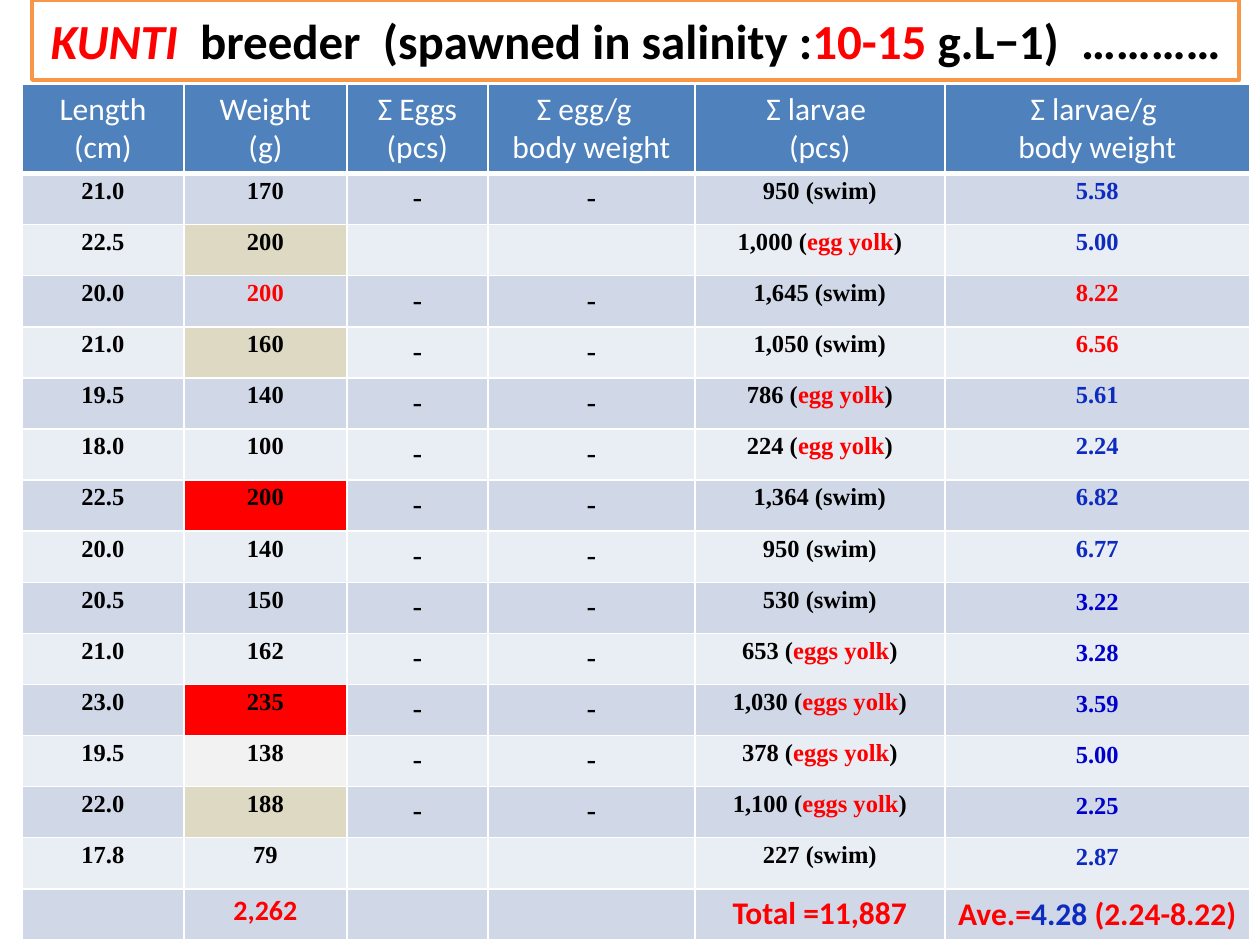
from lxml import etree
from pptx import Presentation
from pptx.dml.color import RGBColor
from pptx.enum.shapes import MSO_SHAPE
from pptx.enum.text import MSO_ANCHOR, PP_ALIGN
from pptx.oxml.ns import qn
from pptx.util import Pt

RECTANGLE = MSO_SHAPE.RECTANGLE
MIDDLE = MSO_ANCHOR.MIDDLE
CENTER = PP_ALIGN.CENTER
EMU_PER_PX = 914400 // 126

SANS, SERIF = "Calibri", "Times New Roman"
BLACK, WHITE, RED = "000000", "FFFFFF", "FF0000"
BLUE, DEEP_BLUE = "0D2BBF", "0000CC"
ORANGE, HEADER_BLUE = "F79646", "4F81BD"
TAN, PALE_GRAY = "DDD9C3", "F2F2F2"
BANDS = ["D0D8E8", "E9EDF4"]

COLUMN_WIDTHS = [162, 163, 141, 207, 250, 305]
HEADER_HEIGHT, ROW_HEIGHT = 89, 51
HEADERS = [
    ["Length", "(cm)"],
    ["Weight", "(g)"],
    ["Ʃ Eggs", "(pcs)"],
    ["Ʃ egg/g  ", "body weight"],
    ["Ʃ larvae ", "(pcs)"],
    ["Ʃ larvae/g ", "body weight"],
]
BREEDERS = [
    ("21.0", "170", "-", "950", "swim", "5.58", BLUE),
    ("22.5", "200", "", "1,000", "egg yolk", "5.00", BLUE),
    ("20.0", "200", "-", "1,645", "swim", "8.22", RED),
    ("21.0", "160", "-", "1,050", "swim", "6.56", RED),
    ("19.5", "140", "-", "786", "egg yolk", "5.61", BLUE),
    ("18.0", "100", "-", "224", "egg yolk", "2.24", BLUE),
    ("22.5", "200", "-", "1,364", "swim", "6.82", BLUE),
    ("20.0", "140", "-", "950", "swim", "6.77", BLUE),
    ("20.5", "150", "-", "530", "swim", "3.22", DEEP_BLUE),
    ("21.0", "162", "-", "653", "eggs yolk", "3.28", DEEP_BLUE),
    ("23.0", "235", "-", "1,030", "eggs yolk", "3.59", DEEP_BLUE),
    ("19.5", "138", "-", "378", "eggs yolk", "5.00", DEEP_BLUE),
    ("22.0", "188", "-", "1,100", "eggs yolk", "2.25", DEEP_BLUE),
    ("17.8", "79", "", "227", "swim", "2.87", BLUE),
]
WEIGHT_FILLS = {2: TAN, 4: TAN, 7: RED, 11: RED, 12: PALE_GRAY, 13: TAN}
RED_WEIGHT_ROW = 3
FIRST_INSET_RATIO_ROW = 9


def px(length):
    return length * EMU_PER_PX


def color(value):
    return RGBColor.from_string(value)


def add_text(paragraph, text, font=SERIF, size=14, fill=BLACK, bold=True,
             italic=False, spacing=None):
    paragraph.alignment = CENTER
    if spacing:
        paragraph.line_spacing = spacing
    run = paragraph.add_run()
    run.text = text
    run.font.name = font
    run.font.size = Pt(size)
    run.font.bold = bold
    run.font.italic = italic
    run.font.color.rgb = color(fill)


def style_cell(cell, fill, bottom_width=1):
    properties = cell._tc.get_or_add_tcPr()
    for side in ("L", "R", "T", "B"):
        width = bottom_width if side == "B" else 1
        line = etree.SubElement(properties, qn(f"a:ln{side}"), w=str(Pt(width)))
        solid = etree.SubElement(line, qn("a:solidFill"))
        etree.SubElement(solid, qn("a:srgbClr"), val=WHITE)
    cell.fill.solid()
    cell.fill.fore_color.rgb = color(fill)


def write_cell(cell, *runs, compact=True, **text_format):
    if compact:
        cell.margin_left = cell.margin_right = px(9)
        cell.margin_top = cell.margin_bottom = 0
    for text, fill in runs:
        add_text(cell.text_frame.paragraphs[0], text, fill=fill,
                 spacing=1.15 if compact else None, **text_format)


def write_header(table):
    for column, lines in enumerate(HEADERS):
        cell = table.cell(0, column)
        style_cell(cell, HEADER_BLUE, bottom_width=3)
        frame = cell.text_frame
        for index, line in enumerate(lines):
            paragraph = frame.add_paragraph() if index else frame.paragraphs[0]
            add_text(paragraph, line, font=SANS, size=18, fill=WHITE, bold=False)


def write_breeder(table, row, breeder):
    length, weight, eggs, larvae, stage, ratio, ratio_color = breeder
    write_cell(table.cell(row, 0), (length, BLACK))
    write_cell(table.cell(row, 1),
               (weight, RED if row == RED_WEIGHT_ROW else BLACK))
    if eggs:
        for column in (2, 3):
            write_cell(table.cell(row, column), (eggs, BLACK), compact=False,
                       font=SANS, size=18, bold=False)
    if stage == "swim":
        larvae_runs = [(f"{larvae} ({stage})", BLACK)]
    else:
        larvae_runs = [(f"{larvae} (", BLACK), (stage, RED), (")", BLACK)]
    write_cell(table.cell(row, 4), *larvae_runs)
    write_cell(table.cell(row, 5), (ratio, ratio_color),
               compact=row < FIRST_INSET_RATIO_ROW)


def write_totals(table, row):
    write_cell(table.cell(row, 1), ("2,262", RED), font=SANS, size=16)
    write_cell(table.cell(row, 4), ("Total =11,887", RED), font=SANS, size=18)
    write_cell(table.cell(row, 5), ("Ave.=", RED), ("4.28 ", BLUE),
               ("(2.24-8.22)", RED), compact=False, font=SANS, size=18)


def add_title(slide, left, top, width, height):
    title = slide.shapes.add_shape(RECTANGLE, px(left), px(top), px(width), px(height))
    title.shadow.inherit = False
    title.fill.solid()
    title.fill.fore_color.rgb = color(WHITE)
    title.line.color.rgb = color(ORANGE)
    title.line.width = Pt(2)
    frame = title.text_frame
    frame.word_wrap = True
    frame.vertical_anchor = MIDDLE
    runs = [
        ("KUNTI ", RED, True),
        (" breeder  (spawned in salinity :", BLACK, False),
        ("10-15 ", RED, False),
        ("g.L−1)  …………", BLACK, False),
    ]
    for text, fill, italic in runs:
        add_text(frame.paragraphs[0], text, font=SANS, size=28, fill=fill, italic=italic)


def add_breeder_table(slide, left, top):
    row_count = len(BREEDERS) + 2
    height = HEADER_HEIGHT + ROW_HEIGHT * (row_count - 1)
    table = slide.shapes.add_table(row_count, len(COLUMN_WIDTHS), px(left), px(top),
                                   px(sum(COLUMN_WIDTHS)), px(height)).table
    for column, width in zip(table.columns, COLUMN_WIDTHS):
        column.width = px(width)
    for index, row in enumerate(table.rows):
        row.height = px(ROW_HEIGHT if index else HEADER_HEIGHT)
    write_header(table)
    for row in range(1, row_count):
        band = BANDS[(row - 1) % 2]
        for column in range(len(COLUMN_WIDTHS)):
            fill = WEIGHT_FILLS.get(row, band) if column == 1 else band
            style_cell(table.cell(row, column), fill)
    for row, breeder in enumerate(BREEDERS, start=1):
        write_breeder(table, row, breeder)
    write_totals(table, row_count - 1)


def main():
    presentation = Presentation()
    presentation.slide_width = px(1260)
    presentation.slide_height = px(945)
    slide = presentation.slides.add_slide(presentation.slide_layouts[6])
    add_title(slide, 32, 0, 1207, 80)
    add_breeder_table(slide, 22, 84)
    presentation.save("out.pptx")


if __name__ == "__main__":
    main()
